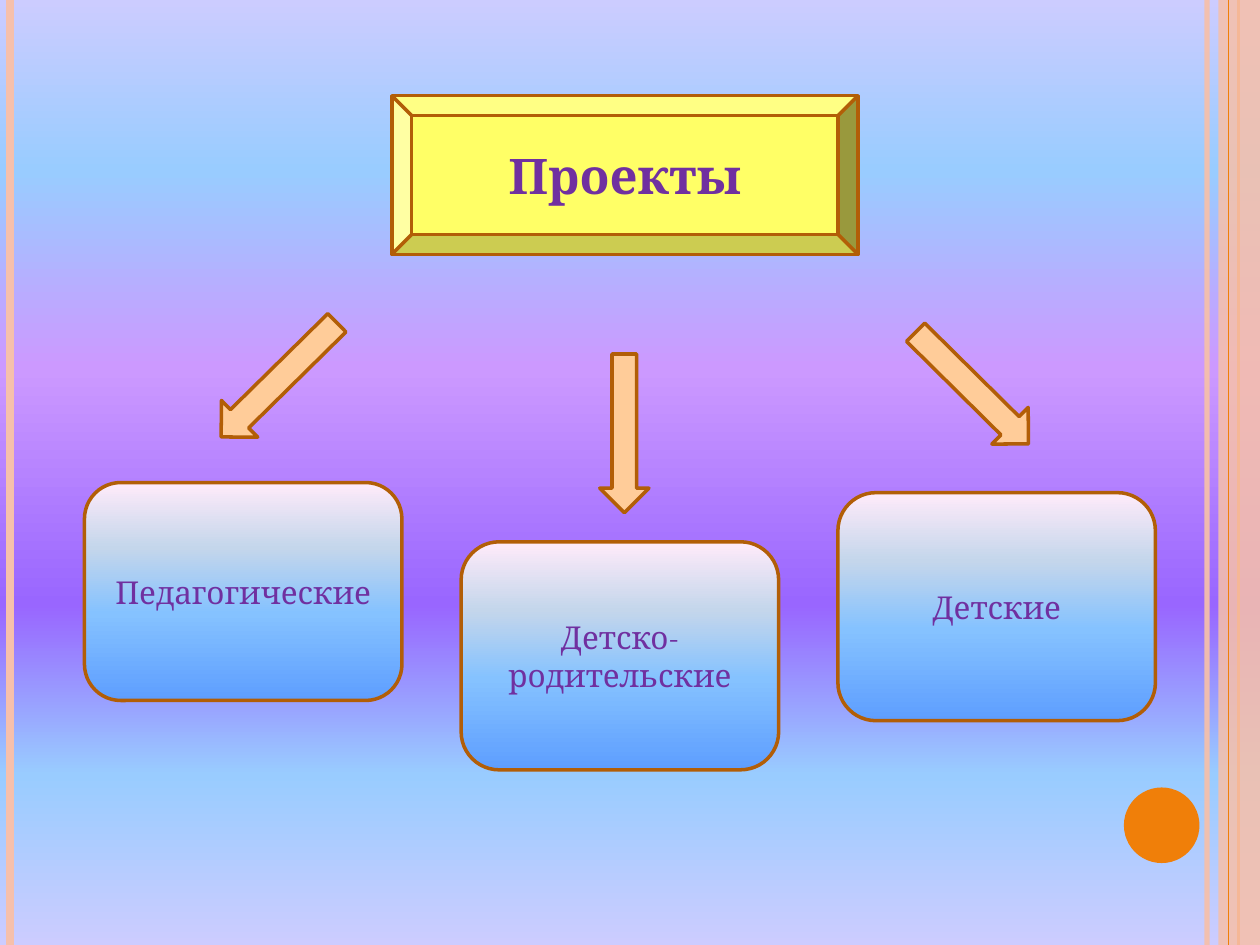
from dataclasses import dataclass

from lxml import etree
from pptx import Presentation
from pptx import util as u
from pptx.dml.color import RGBColor
from pptx.enum import shapes, text
from pptx.oxml.ns import qn

COLUMNS, ROWS = 100, 75  # square grid cells of 0.1 inch


@dataclass(frozen=True)
class Theme:
    font: str = "Cambria"
    title_size: int = 28
    box_size: int = 18
    text: str = "7030A0"
    outline: str = "B25E07"
    outline_width: float = 2
    title_fill: str = "FFFF66"
    arrow_fill: str = "FFCC99"
    accent: str = "F07F09"
    pale: str = "F6C0AB"
    # Gradient stops run from the bottom edge to the top edge.
    background: tuple = ((0, "CCCCFF"), (18, "99CCFF"), (36, "9966FF"),
                         (61, "CC99FF"), (82, "99CCFF"), (100, "CCCCFF"))
    box_fill: tuple = ((0, "5E9EFF"), (40, "85C2FF"), (70, "C4D6EB"), (100, "FFEBFA"))


THEME = Theme()


def cells(*counts):
    return [u.Inches(count / 10) for count in counts]


def set_alpha(fill_parent, percent):
    color = fill_parent.find(".//" + qn("a:srgbClr"))
    etree.SubElement(color, qn("a:alpha"), val=str(percent * 1000))


def fill_gradient(fill, element, stops):
    """Fill upwards with any number of stops; element holds the fill's XML."""
    fill.gradient()
    fill.gradient_angle = 90
    stop_list = element.find(".//" + qn("a:gsLst"))
    for stop in list(stop_list):
        stop_list.remove(stop)
    for position, color in stops:
        stop = etree.SubElement(stop_list, qn("a:gs"), pos=str(position * 1000))
        etree.SubElement(stop, qn("a:srgbClr"), val=color)


def add_rule(slide, column, color, width, alpha=None):
    """Draw a vertical line over the full height of the slide."""
    line = slide.shapes.add_connector(
        shapes.MSO_CONNECTOR.STRAIGHT, *cells(column, 0, column, ROWS))
    line.line.color.rgb = RGBColor.from_string(color)
    line.line.width = u.Pt(width)
    properties = line.element.spPr
    if alpha:
        set_alpha(properties, alpha)
    etree.SubElement(properties, qn("a:effectLst"))


def add_block(slide, kind, area, fill, outlined=True):
    shape = slide.shapes.add_shape(kind, *cells(*area))
    shape.shadow.inherit = False
    if isinstance(fill, str):
        shape.fill.solid()
        shape.fill.fore_color.rgb = RGBColor.from_string(fill)
    else:
        fill_gradient(shape.fill, shape.element.spPr, fill)
    if outlined:
        shape.line.color.rgb = RGBColor.from_string(THEME.outline)
        shape.line.width = u.Pt(THEME.outline_width)
    else:
        shape.line.fill.background()
    return shape


def write_label(shape, label, size, bold=False):
    frame = shape.text_frame
    frame.text = label
    frame.word_wrap = True
    frame.vertical_anchor = text.MSO_ANCHOR.MIDDLE
    paragraph = frame.paragraphs[0]
    paragraph.alignment = text.PP_ALIGN.CENTER
    font = paragraph.runs[0].font
    font.name, font.size, font.bold = THEME.font, u.Pt(size), bold
    font.color.rgb = RGBColor.from_string(THEME.text)


def add_decoration(slide):
    kinds = shapes.MSO_SHAPE
    add_rule(slide, 95.8, THEME.pale, 3, alpha=93)
    add_rule(slide, 0.8, THEME.pale, 4.5)
    add_rule(slide, 98.3, THEME.accent, 1.5)
    band = add_block(slide, kinds.RECTANGLE, (96.7, 0, 3.3, ROWS), THEME.pale, outlined=False)
    set_alpha(band.element.spPr, 87)
    add_rule(slide, 97.5, THEME.accent, 0.75)
    add_block(slide, kinds.OVAL, (89.2, 62.5, 6, 6), THEME.accent, outlined=False)


def add_project_type(slide, label, box_area, arrow_area, rotation):
    kinds = shapes.MSO_SHAPE
    box = add_block(slide, kinds.FLOWCHART_ALTERNATE_PROCESS, box_area, THEME.box_fill)
    write_label(box, label, THEME.box_size)
    arrow = add_block(slide, kinds.DOWN_ARROW, arrow_area, THEME.arrow_fill)
    arrow.rotation = rotation


def main():
    presentation = Presentation()
    presentation.slide_width, presentation.slide_height = cells(COLUMNS, ROWS)
    slide = presentation.slides.add_slide(presentation.slide_layouts[6])
    fill_gradient(slide.background.fill, slide.element, THEME.background)
    add_decoration(slide)

    title = add_block(slide, shapes.MSO_SHAPE.BEVEL, (31.1, 7.6, 37, 12.6), THEME.title_fill)
    write_label(title, "Проекты", THEME.title_size, bold=True)

    box_width, box_pitch = 25.2, 29.9
    project_types = (
        ("Педагогические", 38.3, 17.3, (20.1, 23.7, 4.1, 12.9), 45.4),
        ("Детско-родительские", 43, 18.1, (47.6, 28.1, 3.9, 12.6), 0),
        ("Детские", 39.1, 18.1, (75.1, 24.5, 4.1, 12.6), 314.7),
    )
    for index, (label, top, height, arrow_area, rotation) in enumerate(project_types):
        box_area = (6.7 + index * box_pitch, top, box_width, height)
        add_project_type(slide, label, box_area, arrow_area, rotation)

    presentation.save("out.pptx")


if __name__ == "__main__":
    main()
